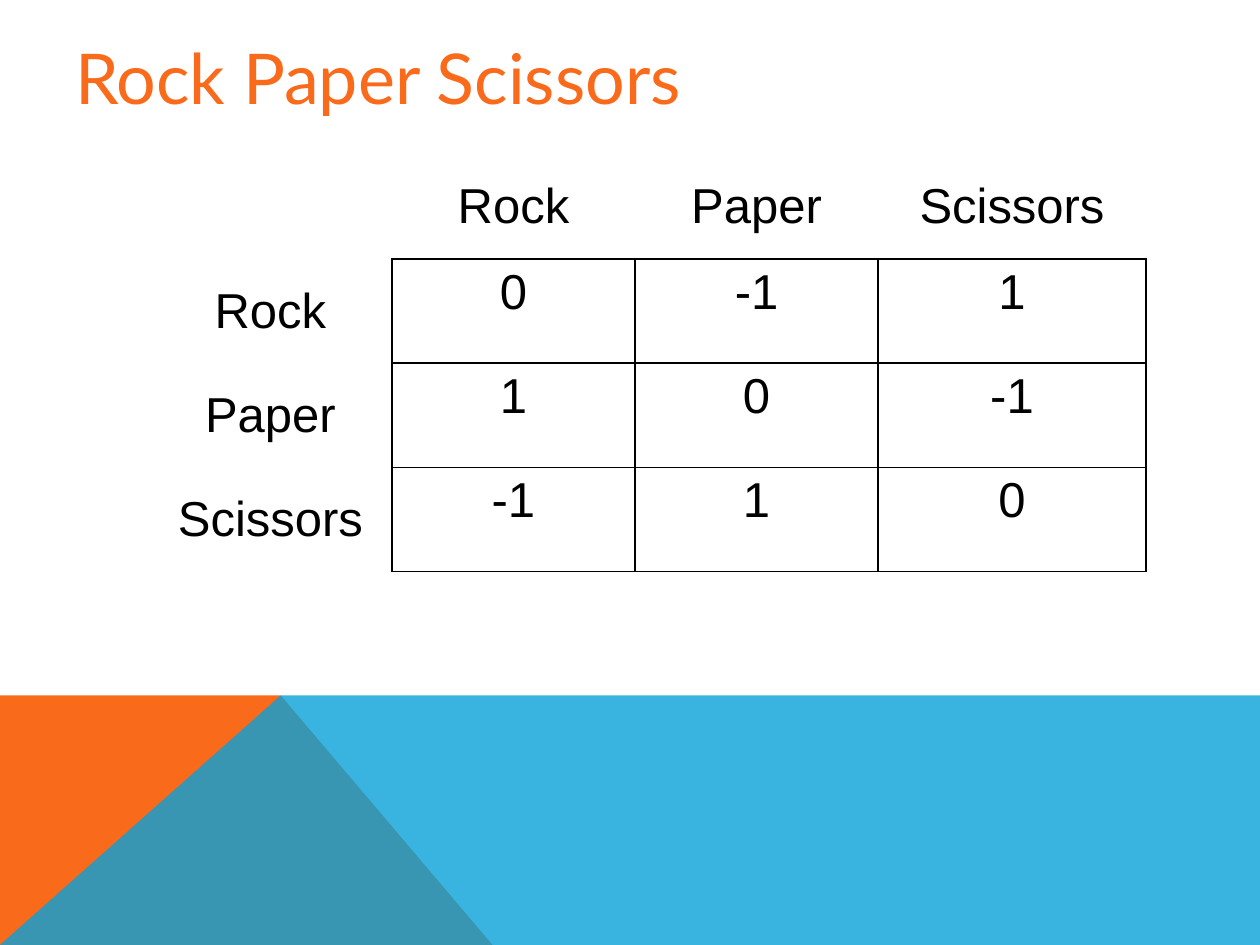
from lxml.etree import SubElement
from pptx import Presentation
from pptx.dml.color import RGBColor
from pptx.enum.text import MSO_ANCHOR, PP_ALIGN
from pptx.oxml.ns import qn
from pptx.util import Cm, Pt

ORANGE, BLUE, BLACK = "F96A1B", "08A1D9", "000000"
WIDTH, HEIGHT = 25.4, 19.05
BAND_TOP, PEAK = 14.02, 5.66

MOVES = ["Rock", "Paper", "Scissors"]
PAYOFFS = [[0, -1, 1], [1, 0, -1], [-1, 1, 0]]


def color(value):
    return RGBColor.from_string(value)


def write_text(frame, text, *, font, size, fill, anchor=MSO_ANCHOR.MIDDLE,
               align=PP_ALIGN.LEFT, space_before=0):
    frame.word_wrap = True
    frame.vertical_anchor = anchor
    paragraph = frame.paragraphs[0]
    paragraph.alignment = align
    paragraph.space_before = Pt(space_before)
    run = paragraph.add_run()
    run.text = text
    run.font.name = font
    run.font.size = Pt(size)
    run.font.color.rgb = color(fill)


def set_borders(cell, visible):
    """Draw the sides named in visible (letters of LRTB) and clear the others."""
    properties = cell._tc.get_or_add_tcPr()
    for side in "LRTB":
        line = SubElement(properties, qn(f"a:ln{side}"), w=str(Pt(1)))
        if side in visible:
            solid = SubElement(line, qn("a:solidFill"))
            SubElement(solid, qn("a:srgbClr"), val=BLACK)
        else:
            SubElement(line, qn("a:noFill"))


class SlideBuilder:
    """Holds the style and the slide being drawn."""

    title_style = dict(font="Lato", size=40, fill=ORANGE)
    cell_style = dict(font="Arial", size=28, fill=BLACK,
                      align=PP_ALIGN.CENTER, space_before=5.6)

    def __init__(self, presentation):
        self.slide = presentation.slides.add_slide(presentation.slide_layouts[6])

    def polygon(self, points, fill, opacity=100):
        first, *rest = [(Cm(x), Cm(y)) for x, y in points]
        builder = self.slide.shapes.build_freeform(*first)
        builder.add_line_segments(rest, close=True)
        shape = builder.convert_to_shape()
        shape.shadow.inherit = False
        shape.line.fill.background()
        shape.fill.solid()
        shape.fill.fore_color.rgb = color(fill)
        if opacity < 100:
            fill_color = shape._element.spPr.find(f".//{qn('a:srgbClr')}")
            SubElement(fill_color, qn("a:alpha"), val=str(opacity * 1000))

    def title(self, text, left, top, width, height):
        box = self.slide.shapes.add_textbox(Cm(left), Cm(top), Cm(width), Cm(height))
        write_text(box.text_frame, text, **self.title_style)

    def payoff_table(self, left, top, column_widths, row_height):
        rows = [["", *MOVES]]
        rows += [[move, *map(str, values)] for move, values in zip(MOVES, PAYOFFS)]
        table = self.slide.shapes.add_table(
            len(rows), len(column_widths), Cm(left), Cm(top),
            Cm(sum(column_widths)), Cm(row_height * len(rows))).table
        table.first_row = table.horz_banding = False
        for column, width in zip(table.columns, column_widths):
            column.width = Cm(width)
        for row_index, row in enumerate(rows):
            table.rows[row_index].height = Cm(row_height)
            for column_index, text in enumerate(row):
                cell = table.cell(row_index, column_index)
                if row_index and column_index:
                    visible, anchor = "LRTB", MSO_ANCHOR.TOP
                else:
                    visible = "R" if row_index else "B" if column_index else ""
                    anchor = MSO_ANCHOR.MIDDLE
                set_borders(cell, visible)
                cell.fill.background()
                if text:
                    write_text(cell.text_frame, text, **self.cell_style)
                    cell.vertical_anchor = anchor


def main():
    presentation = Presentation()
    presentation.slide_width, presentation.slide_height = Cm(WIDTH), Cm(HEIGHT)
    builder = SlideBuilder(presentation)
    builder.polygon([(0, HEIGHT), (0, BAND_TOP), (PEAK, BAND_TOP), (9.93, HEIGHT)],
                    ORANGE)
    builder.polygon([(0, HEIGHT), (PEAK, BAND_TOP), (WIDTH, BAND_TOP), (WIDTH, HEIGHT)],
                    BLUE, opacity=80)
    builder.title("Rock Paper Scissors", 1.27, 0.76, 22.86, 1.57)
    builder.payoff_table(3, 3.12, [4.9, 4.9, 4.9, 5.4], 2.1)
    presentation.save("out.pptx")


if __name__ == "__main__":
    main()
